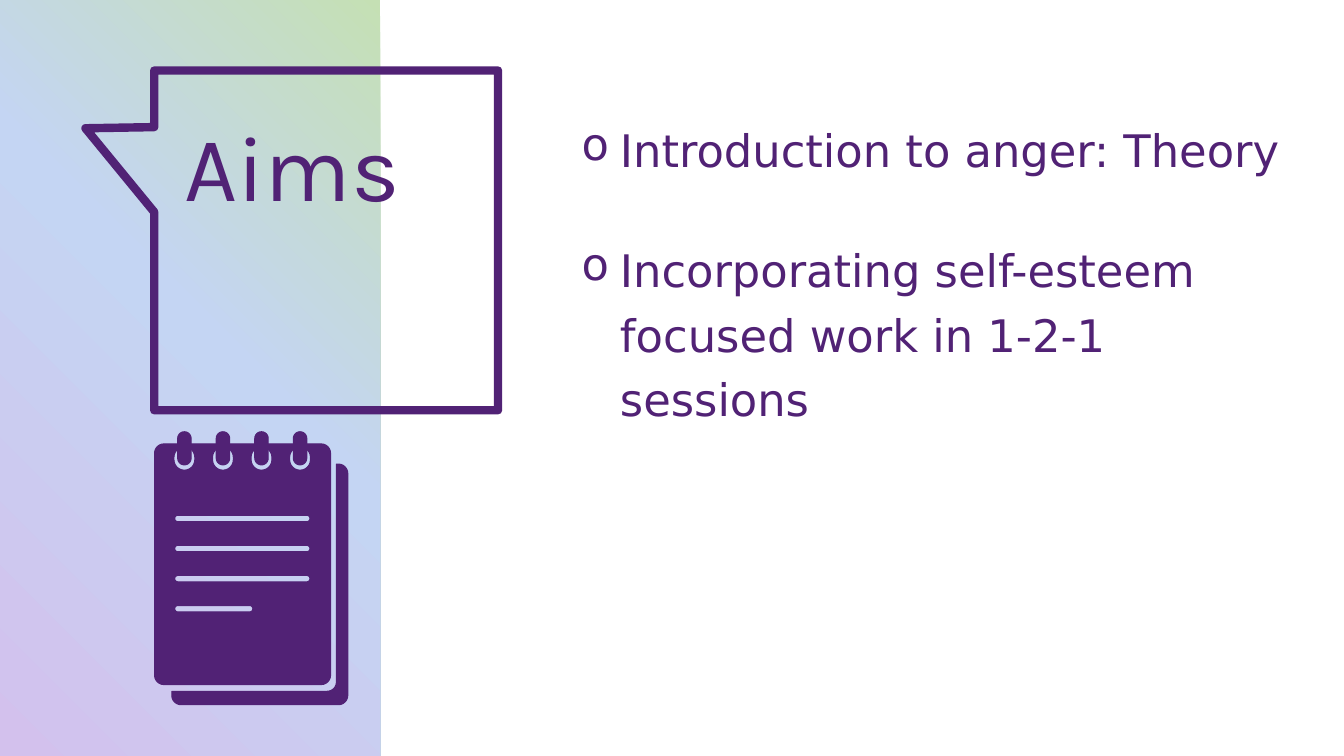
from math import cos, radians, sin

from pptx import Presentation
from pptx.dml.color import RGBColor
from pptx.enum.shapes import MSO_SHAPE
from pptx.oxml import parse_xml
from pptx.oxml.ns import nsdecls, qn
from pptx.util import Inches, Pt

RECT = MSO_SHAPE.RECTANGLE
CALLOUT = MSO_SHAPE.RECTANGULAR_CALLOUT
COLORS = {"ink": "512275", "lilac": "D3C1ED", "sky": "C4D5F3", "leaf": "C5E0B4"}
COLS, ROWS = 160, 90


def write(p, text, font, size, color, spacing):
    p.line_spacing = spacing
    r = p.add_run()
    r.text = text
    r.font.name, r.font.size = font, Pt(size)
    r.font.color.rgb = RGBColor.from_string(COLORS[color])


def add_bullet(p, char, margin, indent):
    pPr = p._p.get_or_add_pPr()
    pPr.set("marL", str(Inches(margin)))
    pPr.set("indent", str(Inches(indent)))
    pPr.append(parse_xml(f'<a:buChar {nsdecls("a")} char="{char}"/>'))


def arc(cx, cy, r, start, end, steps=6):
    angles = [radians(start + (end - start) * i / steps) for i in range(steps + 1)]
    return [(cx + r * cos(a), cy + r * sin(a)) for a in angles]


def rounded(x, y, w, h, r):
    """Points of a rounded rectangle, clockwise from its left side."""
    right, bottom = x + w - r, y + h - r
    return (arc(x + r, y + r, r, 180, 270) + arc(right, y + r, r, 270, 360)
            + arc(right, bottom, r, 0, 90) + arc(x + r, bottom, r, 90, 180))


class Deck:
    """Holds the style and the current slide; lengths are grid columns and rows."""

    def __init__(self):
        self.prs = Presentation()
        self.prs.slide_width, self.prs.slide_height = Inches(13.33), Inches(7.5)
        self.slide = self.prs.slides.add_slide(self.prs.slide_layouts[6])

    def x(self, cols):
        return round(self.prs.slide_width * cols / COLS)

    def y(self, rows):
        return round(self.prs.slide_height * rows / ROWS)

    def box(self, x, y, w, h):
        return self.x(x), self.y(y), self.x(w), self.y(h)

    def stroke(self, sp, width):
        sp.line.color.rgb = RGBColor.from_string(COLORS["ink"])
        sp.line.width = Pt(width)

    def gradient_band(self, box, stops):
        """Rectangle with a radial gradient centred on its bottom left corner."""
        sp = self.slide.shapes.add_shape(RECT, *self.box(*box))
        sp.shadow.inherit = False
        sp.line.fill.background()
        sp.fill.background()
        gs = "".join(f'<a:gs pos="{pos * 1000}"><a:srgbClr val="{COLORS[name]}"/></a:gs>'
                     for pos, name in stops)
        spPr = sp._element.spPr
        spPr.replace(spPr.find(qn("a:noFill")), parse_xml(
            f'<a:gradFill {nsdecls("a")} rotWithShape="1"><a:gsLst>{gs}</a:gsLst>'
            '<a:path path="circle"><a:fillToRect t="100000" r="100000"/></a:path>'
            '</a:gradFill>'))

    def callout(self, box, tip_x, tip_y):
        sp = self.slide.shapes.add_shape(CALLOUT, *self.box(*box))
        sp.shadow.inherit = False
        sp.adjustments[0], sp.adjustments[1] = tip_x, tip_y
        sp.fill.background()
        self.stroke(sp, 6)

    def text_frame(self, box, inset_x=0.1, inset_y=0.05):
        tf = self.slide.shapes.add_textbox(*self.box(*box)).text_frame
        tf.word_wrap = True
        tf.margin_left = tf.margin_right = Inches(inset_x)
        tf.margin_top = tf.margin_bottom = Inches(inset_y)
        return tf

    def title(self, box, text):
        tf = self.text_frame(box, inset_y=0.1)
        write(tf.paragraphs[0], text, font="Karla", size=66, color="ink", spacing=0.9)

    def bullets(self, box, items, gap):
        tf = self.text_frame(box)
        for i, item in enumerate(items):
            p = tf.add_paragraph() if i else tf.paragraphs[0]
            p.space_before = Pt(gap if i else 0)
            write(p, item, font="DejaVu Sans", size=32, color="ink", spacing=1.2)
            add_bullet(p, "o", margin=0.57, indent=-0.38)

    def outline(self, *contours):
        """Filled freeform; contours inside the first one become holes."""
        builder = None
        for contour in contours:
            points = [(self.x(x), self.y(y)) for x, y in contour]
            if builder is None:
                builder = self.slide.shapes.build_freeform(*points[0])
            else:
                builder.move_to(*points[0])
            builder.add_line_segments(points[1:], close=True)
        sp = builder.convert_to_shape()
        sp.shadow.inherit = False
        sp.fill.solid()
        sp.fill.fore_color.rgb = RGBColor.from_string(COLORS["ink"])
        self.stroke(sp, 0.75)

    def notepad(self, x, y, w, h):
        r = 1.1
        dx, dy = 2.05, 2.4
        right, bottom = x + w + dx, y + h + dy
        inner_x, inner_y = x + w + 0.7, y + h + 0.8
        self.outline(
            [(inner_x, y + dy)] + arc(inner_x - r, inner_y - r, r, 0, 90)
            + [(x + dx, inner_y)] + arc(x + dx + r, bottom - r, r, 180, 90)
            + arc(right - r, bottom - r, r, 90, 0)
            + arc(right - r, y + dy + r, r, 0, -90))

        ring_centers = [x + 3.55 + 4.59 * i for i in range(4)]
        for cx in ring_centers:
            self.outline(rounded(cx - 0.8, y - 1.45, 1.6, 3.95, 0.8))

        holes = [rounded(cx - 1.24, y + 0.35, 2.48, 2.78, 1.24) for cx in ring_centers]
        lines = [rounded(x + 2.4, y + 8.5 + 3.58 * i, width, 0.76, 0.38)
                 for i, width in enumerate([16.1, 16.1, 16.1, 9.3])]
        self.outline(rounded(x, y, w, h, r), *holes, *lines)


def main():
    deck = Deck()
    deck.gradient_band((0, 0, 45.25, ROWS), [(0, "lilac"), (56, "sky"), (100, "leaf")])
    deck.callout((18.36, 8.4, 40.93, 40.44), -0.7, -0.33)
    deck.title((20.76, 13.32, 32.77, 15.24), "Aims")
    deck.bullets((65.78, 12.72, 88.8, 46.8),
                 ["Introduction to anger: Theory",
                  "Incorporating self-esteem focused work in 1-2-1 sessions"], gap=40)
    deck.notepad(18.4, 52.85, 20.95, 28.65)
    deck.prs.save("out.pptx")


if __name__ == "__main__":
    main()
